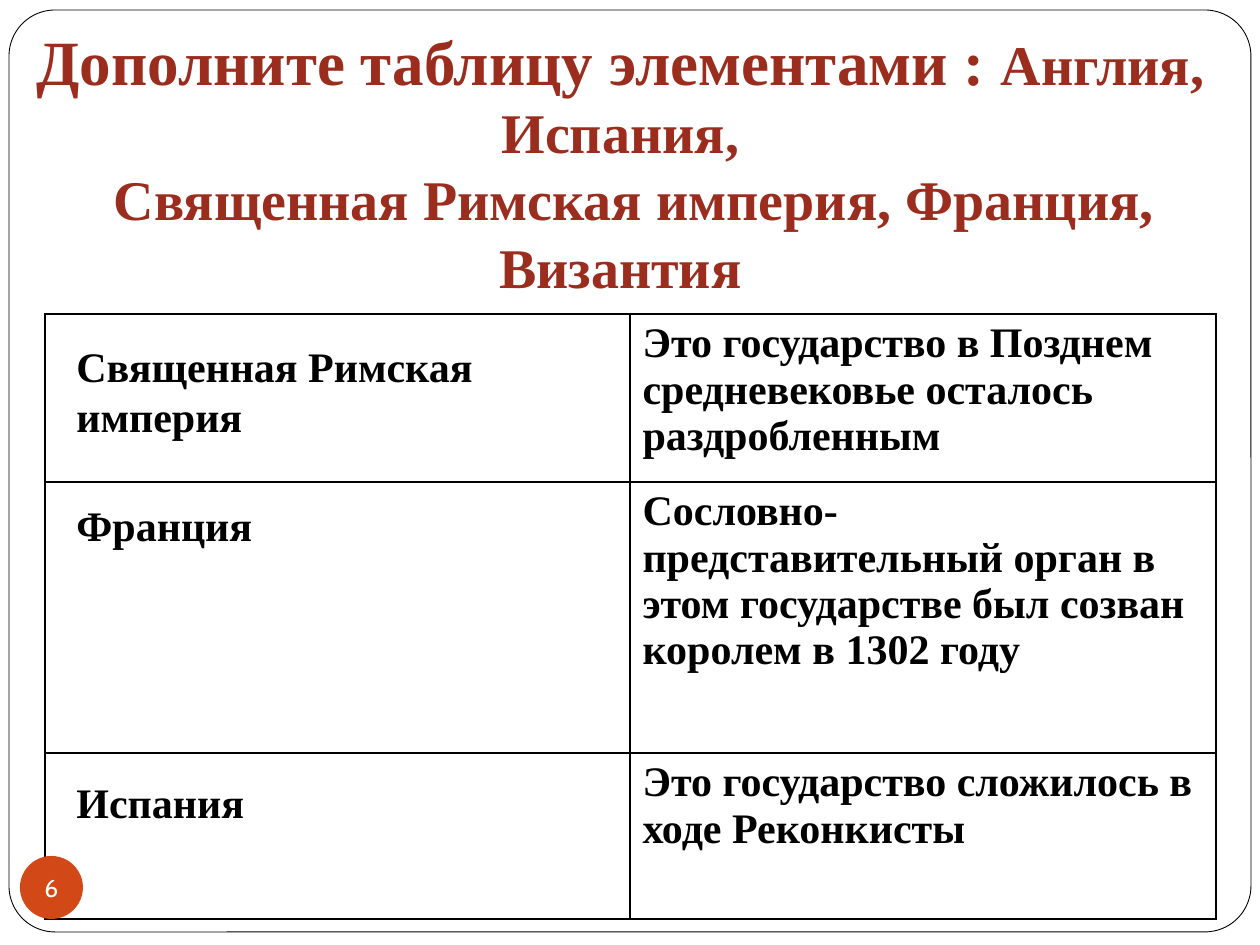
from lxml.etree import SubElement
from pptx import Presentation
from pptx.dml.color import RGBColor
from pptx.enum.shapes import MSO_SHAPE as Shape
from pptx.enum.text import MSO_ANCHOR as Anchor, PP_ALIGN as Align
from pptx.oxml.ns import qn
from pptx.util import Emu, Pt

BLACK = RGBColor(0x00, 0x00, 0x00)
WHITE = RGBColor(0xFF, 0xFF, 0xFF)
BRICK = RGBColor(0x9B, 0x2D, 0x1F)
ORANGE = RGBColor(0xD3, 0x48, 0x17)
SERIF = "Times New Roman"

TITLE = [
    [("Дополните таблицу элементами : ", 36), ("Англия, Испания,", 32)],
    [("Священная Римская империя, Франция, Византия", 32)],
]
TITLE_INDENT = 28

# row height, description in the right column
ROWS = [
    (168, "Это государство в Позднем средневековье осталось раздробленным"),
    (271, "Сословно- представительный орган в этом государстве был созван королем в 1302 году"),
    (166, "Это государство сложилось в ходе Реконкисты"),
]
COLUMN_WIDTHS = [585, 586]
TABLE_LEFT, TABLE_TOP = 45, 314

# answer, top, width, height
ANSWERS = [
    ("Священная Римская империя", 334, 556, 115),
    ("Франция", 493, 486, 63),
    ("Испания", 770, 387, 63),
]
ANSWER_LEFT = 64


def px(length):
    return Emu(round(length * 914400 / 126))


def set_font(font, size, color, name=SERIF, bold=True):
    font.name, font.size, font.bold = name, Pt(size), bold
    font.color.rgb = color


def add_panel(slide, kind, box, fill):
    shape = slide.shapes.add_shape(kind, *map(px, box))
    shape.shadow.inherit = False
    shape.fill.solid()
    shape.fill.fore_color.rgb = fill
    return shape


def add_text_frame(slide, box):
    frame = slide.shapes.add_textbox(*map(px, box)).text_frame
    frame.word_wrap = True
    return frame


def add_title(slide):
    frame = add_text_frame(slide, (15, 16, 1211, 292))
    for index, runs in enumerate(TITLE):
        paragraph = frame.add_paragraph() if index else frame.paragraphs[0]
        paragraph.alignment = Align.CENTER
        if index:
            paragraph._p.get_or_add_pPr().set("indent", str(px(TITLE_INDENT)))
        for text, size in runs:
            run = paragraph.add_run()
            run.text = text
            set_font(run.font, size, BRICK)


def style_cell(cell):
    """Clear the banded fill and draw a thin black border on every side."""
    properties = cell._tc.get_or_add_tcPr()
    for side in ("lnL", "lnR", "lnT", "lnB"):
        line = SubElement(properties, qn(f"a:{side}"), w=str(Pt(1)))
        fill = SubElement(line, qn("a:solidFill"))
        SubElement(fill, qn("a:srgbClr"), val=str(BLACK))
    cell.fill.background()


def add_table(slide):
    heights = [height for height, _ in ROWS]
    box = TABLE_LEFT, TABLE_TOP, sum(COLUMN_WIDTHS), sum(heights)
    table = slide.shapes.add_table(len(ROWS), len(COLUMN_WIDTHS), *map(px, box)).table
    table.first_row = table.horz_banding = False
    for column, width in zip(table.columns, COLUMN_WIDTHS):
        column.width = px(width)
    for row, (height, description) in zip(table.rows, ROWS):
        row.height = px(height)
        for cell in row.cells:
            style_cell(cell)
        row.cells[1].text = description
        set_font(row.cells[1].text_frame.paragraphs[0].font, 24, BLACK)


def add_page_number(slide):
    badge = add_panel(slide, Shape.OVAL, (20, 856, 63, 63), ORANGE)
    badge.line.fill.background()
    frame = badge.text_frame
    frame.margin_left = frame.margin_right = frame.margin_top = frame.margin_bottom = 0
    frame.word_wrap = False
    frame.vertical_anchor = Anchor.MIDDLE
    paragraph = frame.paragraphs[0]
    paragraph.text = "6"
    paragraph.alignment = Align.CENTER
    set_font(paragraph.font, 14, WHITE, "Cabin", False)


def add_answers(slide):
    for answer, top, width, height in ANSWERS:
        frame = add_text_frame(slide, (ANSWER_LEFT, top, width, height))
        paragraph = frame.paragraphs[0]
        paragraph.text = answer
        set_font(paragraph.font, 24, BLACK)


def main():
    presentation = Presentation()
    presentation.slide_width, presentation.slide_height = px(1260), px(945)
    slide = presentation.slides.add_slide(presentation.slide_layouts[6])
    border = add_panel(slide, Shape.ROUNDED_RECTANGLE, (9, 10, 1242, 922), WHITE)
    border.adjustments[0] = 0.05
    border.line.color.rgb = BLACK
    border.line.width = Pt(0.5)
    add_title(slide)
    add_table(slide)
    add_page_number(slide)
    add_answers(slide)
    presentation.save("out.pptx")


if __name__ == "__main__":
    main()
